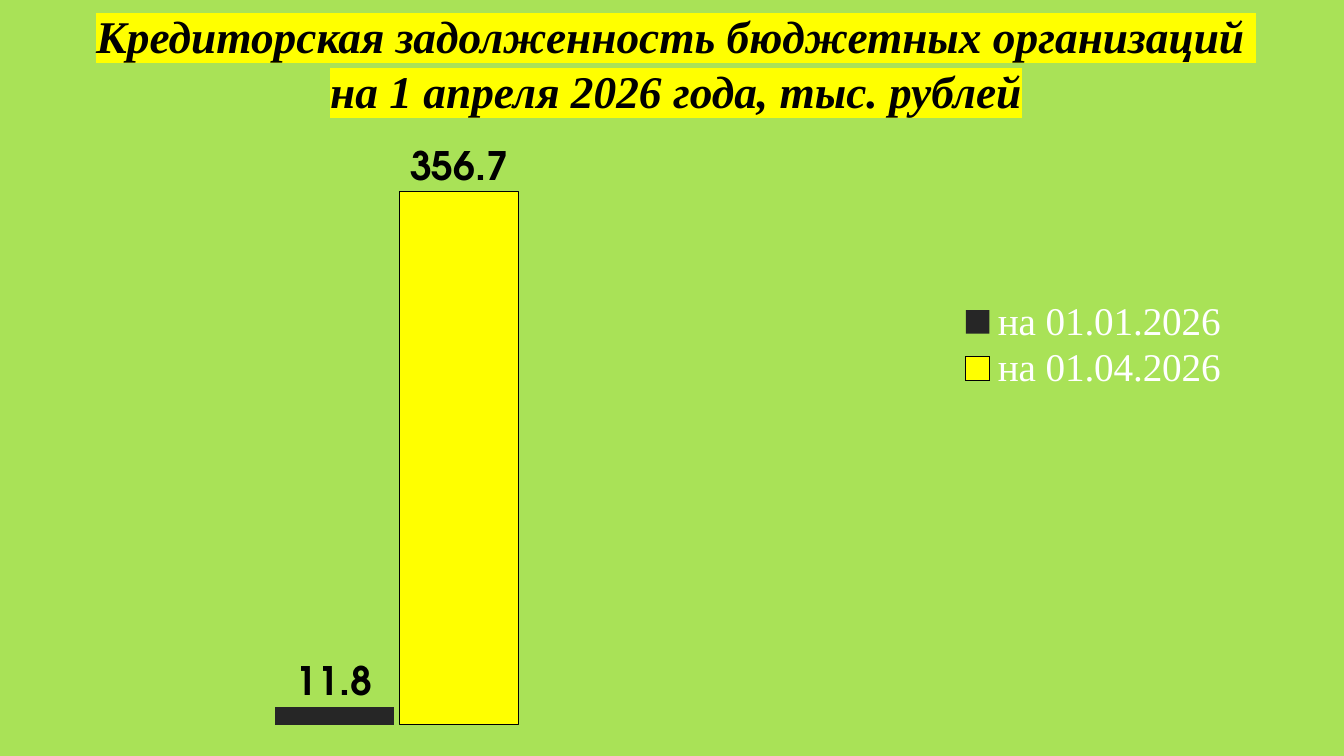
from dataclasses import dataclass

import pptx
import pptx.chart.data
import pptx.dml.color
import pptx.enum.chart
import pptx.enum.text
import pptx.oxml
import pptx.oxml.ns
import pptx.util
from lxml import etree

RGBColor = pptx.dml.color.RGBColor
GREEN = RGBColor(0xA9, 0xE2, 0x57)
YELLOW = RGBColor(0xFF, 0xFF, 0x00)
BLACK = RGBColor(0x00, 0x00, 0x00)
CHARCOAL = RGBColor(0x26, 0x26, 0x26)
WHITE = RGBColor(0xFF, 0xFF, 0xFF)

SERIF = "Times New Roman"
SANS = "TeX Gyre Adventor"
WIDTH = pptx.util.Inches(13.33)
HEIGHT = pptx.util.Inches(7.5)
TITLE_LINES = (
    "Кредиторская задолженность бюджетных организаций ",
    "на 1 апреля 2026 года, тыс. рублей",
)


@dataclass(frozen=True)
class Area:
    x: float
    y: float
    w: float
    h: float

    def on_slide(self) -> tuple[int, int, int, int]:
        return (int(self.x * WIDTH), int(self.y * HEIGHT),
                int(self.w * WIDTH), int(self.h * HEIGHT))


@dataclass(frozen=True)
class DebtSeries:
    name: str
    value: float
    fill: RGBColor
    outlined: bool


TITLE_AREA = Area(0.006, 0.071, 0.994, 0.161)
CHART_AREA = Area(0, 0.151, 0.989, 0.825)
PLOT_AREA = Area(0.019, 0.021, 0.745, 0.958)
LEGEND_AREA = Area(0.72, 0.293, 0.205, 0.155)
DEBTS = (
    DebtSeries("на 01.01.2026", 11.8, CHARCOAL, False),
    DebtSeries("на 01.04.2026", 356.7, YELLOW, True),
)


def style_font(font, name: str, size: float, color: RGBColor, bold: bool = False) -> None:
    font.name = name
    font.size = pptx.util.Pt(size)
    font.bold = bold
    font.color.rgb = color


def highlight(r, color: RGBColor) -> None:
    mark = pptx.oxml.parse_xml(
        f'<a:highlight {pptx.oxml.ns.nsdecls("a")}><a:srgbClr val="{color}"/></a:highlight>')
    r.font._element.find(pptx.oxml.ns.qn("a:latin")).addprevious(mark)


def place(element, area: Area, inner: bool = False) -> None:
    qn = pptx.oxml.ns.qn
    layout = element.find(qn("c:layout"))
    if layout is None:
        layout = etree.Element(qn("c:layout"))
        if inner:
            element.insert(0, layout)
        else:
            element.find(qn("c:legendPos")).addnext(layout)
    manual = etree.SubElement(layout, qn("c:manualLayout"))
    settings = [("layoutTarget", "inner")] if inner else []
    settings += [("xMode", "edge"), ("yMode", "edge"),
                 ("x", area.x), ("y", area.y), ("w", area.w), ("h", area.h)]
    for tag, value in settings:
        etree.SubElement(manual, qn(f"c:{tag}")).set("val", str(value))


def add_title(s) -> None:
    sp = s.shapes.title
    sp.left, sp.top, sp.width, sp.height = TITLE_AREA.on_slide()
    tf = sp.text_frame
    tf.word_wrap = True
    tf.auto_size = pptx.enum.text.MSO_AUTO_SIZE.NONE
    tf.vertical_anchor = pptx.enum.text.MSO_ANCHOR.BOTTOM
    tf.margin_top = 0
    tf.margin_bottom = int(0.077 * HEIGHT)
    p = tf.paragraphs[0]
    p.alignment = pptx.enum.text.PP_ALIGN.CENTER
    p.line_spacing = pptx.util.Pt(39.3)
    for i, line in enumerate(TITLE_LINES):
        if i:
            p.add_line_break()
        r = p.add_run()
        r.text = line
        style_font(r.font, SERIF, 32.4, BLACK, bold=True)
        r.font.italic = True
        highlight(r, YELLOW)


def style_series(series, debt: DebtSeries) -> None:
    series.format.fill.solid()
    series.format.fill.fore_color.rgb = debt.fill
    series.invert_if_negative = False
    if debt.outlined:
        series.format.line.color.rgb = BLACK
        series.format.line.width = pptx.util.Pt(0.75)
    else:
        series.format.line.fill.background()
    labels = series.data_labels
    labels.show_value = True
    labels.position = pptx.enum.chart.XL_LABEL_POSITION.OUTSIDE_END
    style_font(labels.font, SANS, 28, BLACK, bold=True)


def add_debt_chart(s) -> None:
    data = pptx.chart.data.CategoryChartData()
    data.categories = ["1", "2", "", ""]
    for debt in DEBTS:
        data.add_series(debt.name, [None, debt.value, None, None])
    kind = pptx.enum.chart.XL_CHART_TYPE.COLUMN_CLUSTERED
    chart = s.shapes.add_chart(kind, *CHART_AREA.on_slide(), data).chart
    style_font(chart.font, SANS, 10, WHITE)
    chart.has_title = False
    chart.value_axis.has_major_gridlines = False
    chart.value_axis.minimum_scale = 0
    chart.value_axis.maximum_scale = 400
    chart.value_axis.visible = False
    chart.category_axis.visible = False

    plot = chart.plots[0]
    plot.gap_width = 3
    plot.overlap = -5
    plot.vary_by_categories = False
    for series, debt in zip(plot.series, DEBTS):
        style_series(series, debt)

    chart.has_legend = True
    chart.legend.position = pptx.enum.chart.XL_LEGEND_POSITION.RIGHT
    chart.legend.include_in_layout = False
    style_font(chart.legend.font, SERIF, 28, WHITE)
    place(chart._chartSpace.chart.plotArea, PLOT_AREA, inner=True)
    place(chart.legend._element, LEGEND_AREA)


def main() -> None:
    prs = pptx.Presentation()
    prs.slide_width, prs.slide_height = WIDTH, HEIGHT
    s = prs.slides.add_slide(prs.slide_layouts[5])
    s.background.fill.solid()
    s.background.fill.fore_color.rgb = GREEN
    add_title(s)
    add_debt_chart(s)
    prs.save("out.pptx")


if __name__ == "__main__":
    main()
